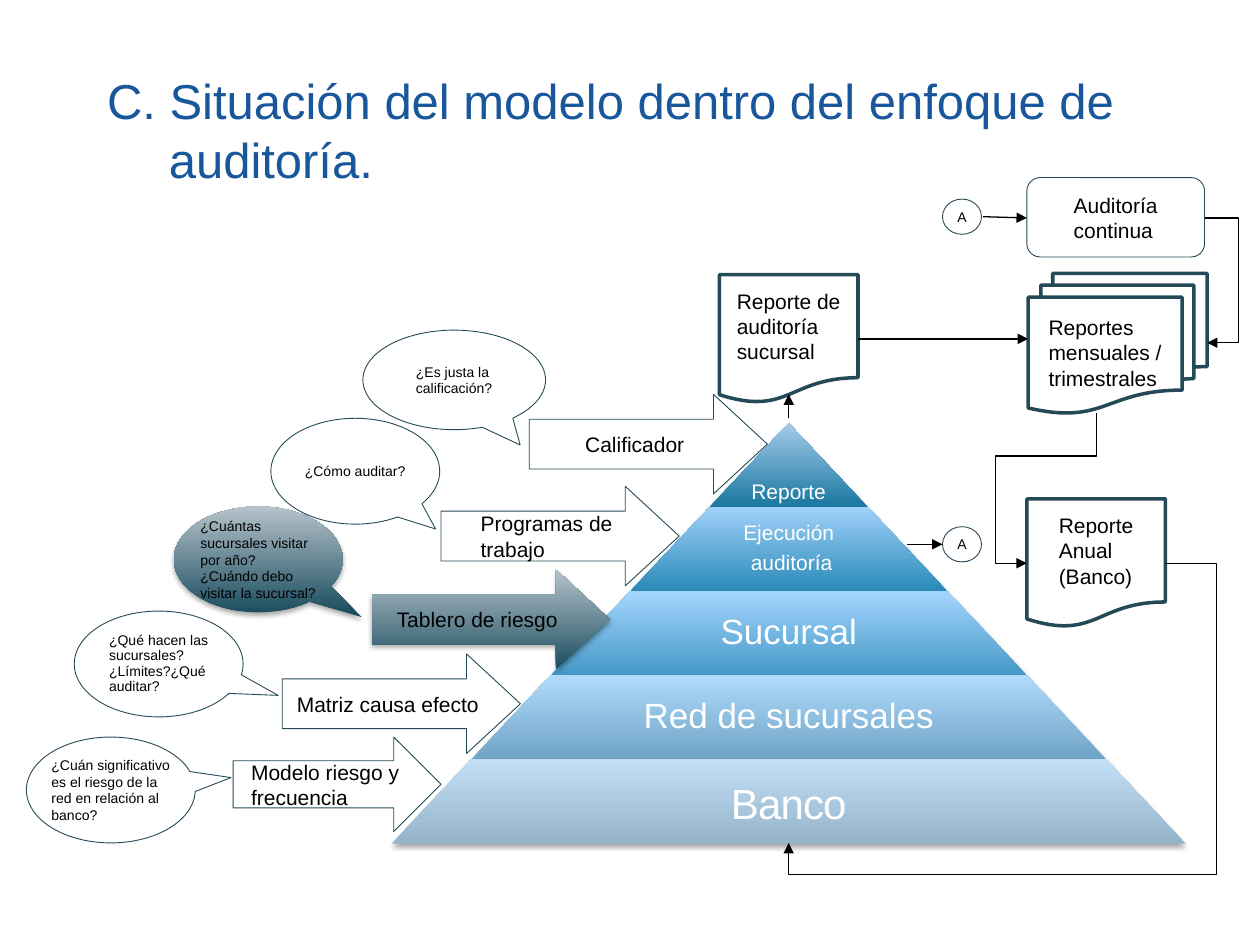
from lxml import etree
from pptx import Presentation
from pptx import util as u
from pptx.dml.color import RGBColor
from pptx.enum import shapes, text
from pptx.oxml import ns

SHAPE = shapes.MSO_SHAPE
ANCHOR = text.MSO_ANCHOR
STEEL = ("1C4E60", "B6C3CB")


def rgb(value):
    """Turn a hex string into a colour."""
    return RGBColor.from_string(value)


def child(parent, tag, **attributes):
    """Append an XML element with the given attributes."""
    node = etree.SubElement(parent, ns.qn(tag))
    for name, value in attributes.items():
        node.set(name, str(value))
    return node


class Diagram:
    """Hold the style and the current slide."""
    font = "Arial"
    ink, outline, title_colour = "000000", "244A58", "18579B"

    def __init__(self, deck):
        """Start a title-only slide."""
        self.page = deck.slides.add_slide(deck.slide_layouts[5])

    def label(self, frame, lines, size, colour, insets, anchor=ANCHOR.MIDDLE):
        """Fill a text frame with paragraphs and return them."""
        frame.word_wrap = True
        frame.auto_size = text.MSO_AUTO_SIZE.NONE
        frame.vertical_anchor = anchor
        frame.margin_left, frame.margin_top, frame.margin_right, frame.margin_bottom = map(u.Inches, insets)
        frame.text = "\n".join(lines)
        for para in frame.paragraphs:
            para.alignment = text.PP_ALIGN.LEFT
            para.font.name, para.font.size = self.font, u.Pt(size)
            para.font.color.rgb = rgb(colour)
        return frame.paragraphs

    def title(self, words, box):
        """Place the title with a hanging indent."""
        holder = self.page.shapes.title
        holder.left, holder.top, holder.width, holder.height = map(u.Inches, box)
        para = self.label(holder.text_frame, [words], 28, self.title_colour, (0.1, 0.05, 0.1, 0.05))[0]
        props = para._p.get_or_add_pPr()
        props.set("marL", str(u.Inches(0.49)))
        props.set("indent", str(u.Inches(-0.49)))

    def gradient(self, shape, colours):
        """Give a shape an upward gradient and a soft shadow."""
        shape.fill.gradient()
        shape.fill.gradient_angle = 90
        for stop, colour in zip(shape.fill.gradient_stops, colours):
            stop.color.rgb = rgb(colour)
        shape.line.fill.background()
        shape.shadow.inherit = False
        effects = shape._element.spPr.find(ns.qn("a:effectLst"))
        shadow = child(effects, "a:outerShdw", blurRad=u.Pt(3.1), dist=u.Pt(1.8),
                       dir=5400000, rotWithShape=0)
        child(child(shadow, "a:srgbClr", val="000000"), "a:alpha", val=35000)

    def shape(self, kind, box, lines, size=12, insets=(0.1, 0.05, 0.1, 0.05),
              adjust=(), fill=None, weight=0.5, colours=None, spacing=None):
        """Add a labelled shape, outlined or shaded."""
        shape = self.page.shapes.add_shape(kind, *map(u.Inches, box))
        for index, value in enumerate(adjust):
            shape.adjustments[index] = value
        if colours:
            self.gradient(shape, colours)
        else:
            if fill:
                shape.fill.solid()
                shape.fill.fore_color.rgb = rgb(fill)
            else:
                shape.fill.background()
            shape.line.color.rgb = rgb(self.outline)
            shape.line.width = u.Pt(weight)
            shape.shadow.inherit = False
        for para in self.label(shape.text_frame, lines, size, self.ink, insets):
            para.line_spacing = spacing
        shape.text_frame._txBody.bodyPr.set("anchorCtr", "1")

    def arrow(self, box, label, adjust=(0.5, 0.541), **style):
        """Add a block arrow."""
        self.shape(SHAPE.RIGHT_ARROW, box, [label], adjust=adjust, **style)

    def callout(self, box, lines, tip, **style):
        """Add a speech bubble pointing at its tip."""
        self.shape(SHAPE.OVAL_CALLOUT, box, lines, 8, (0, 0.05, 0, 0.05), tip, **style)

    def document(self, kind, box, label):
        """Add a document symbol."""
        self.shape(kind, box, [label], fill="FFFFFF", weight=2)

    def reference(self, left, top):
        """Add a circled A."""
        self.shape(SHAPE.FLOWCHART_CONNECTOR, (left, top, 0.31, 0.28), ["A"], 8, (0, 0.05, 0, 0.05))

    def pyramid(self, middle, top, step, height, levels):
        """Stack trapezoids from the apex down, each with its label."""
        group = self.page.shapes.add_group_shape()
        for row, (lines, size, colours, pad, anchor, share) in enumerate(levels):
            width, y = step * (row + 1), top + height * row
            band = group.shapes.add_shape(
                SHAPE.TRAPEZOID, *map(u.Inches, (middle - width / 2, y, width, height)))
            band.adjustments[0] = step / 2 / height
            self.gradient(band, colours)
            box = group.shapes.add_textbox(
                *map(u.Inches, (middle - width * share / 2, y, width * share, height)))
            insets = (0.03, pad, 0.03, 0.03)
            for para in self.label(box.text_frame, lines, size, "FFFFFF", insets, anchor):
                para.alignment = text.PP_ALIGN.CENTER
                para.line_spacing = 0.9
                para.space_after = u.Pt(0.35 * size)
                if size == 24:
                    para.runs[0]._r.get_or_add_rPr().set("spc", "-50")

    def connector(self, start, end, preset="line", adjust=(), turn=0):
        """Add a straight or bent line with an arrowhead at its end."""
        line = self.page.shapes.add_connector(
            shapes.MSO_CONNECTOR.STRAIGHT, *map(u.Inches, start + end))
        line.line.color.rgb = rgb(self.ink)
        line.line.width = u.Pt(0.75)
        props = line._element.spPr
        child(props.find(ns.qn("a:ln")), "a:tailEnd", type="triangle")
        child(props, "a:effectLst")
        if turn:
            props.find(ns.qn("a:xfrm")).set("rot", str(turn * 60000))
        geometry = props.find(ns.qn("a:prstGeom"))
        geometry.set("prst", preset)
        guides = geometry.find(ns.qn("a:avLst"))
        for index, value in enumerate(adjust, 1):
            child(guides, "a:gd", name=f"adj{index}", fmla=f"val {round(value * 100000)}")


def main():
    """Build the audit approach slide."""
    deck = Presentation()
    deck.slide_width, deck.slide_height = u.Inches(10), u.Inches(7.5)
    page = Diagram(deck)
    page.title("C. Situación del modelo dentro del enfoque de auditoría.", (0.75, 0.67, 8.5, 0.72))

    page.pyramid(6.26, 3.36, 1.26, 0.667, [
        (["Reporte"], 12, ("1877A0", "A5CBEA"), 0.02, ANCHOR.BOTTOM, 1),
        (["Ejecución", " auditoría"], 12, ("2989B8", "9FD1F9"), 0.02, ANCHOR.MIDDLE, 0.65),
        (["Sucursal"], 20, ("4598C6", "A3D6FF"), 0.03, ANCHOR.MIDDLE, 0.65),
        (["Red de sucursales"], 20, ("6FA4C5", "AFDAFC"), 0.03, ANCHOR.MIDDLE, 0.65),
        (["Banco"], 24, ("95B3C9", "C2DFF6"), 0.1, ANCHOR.MIDDLE, 0.65),
    ])

    page.arrow((1.85, 5.85, 1.65, 0.75), "Modelo riesgo y frecuencia", (0.5, 0.5))
    page.arrow((2.95, 4.52, 1.89, 0.79), "Tablero de riesgo", colours=STEEL)
    page.arrow((3.5, 3.86, 1.89, 0.79), "Programas de trabajo")
    page.arrow((2.24, 5.19, 1.89, 0.79), "Matriz causa efecto")
    page.callout((0.21, 5.85, 1.34, 0.84),
                 ["¿Cuán significativo es el riesgo de la red en relación al banco?"], (0.712, -0.117))
    page.callout((0.59, 4.85, 1.34, 0.84),
                 ["¿Qué hacen las sucursales?", "¿Límites?¿Qué auditar?"], (0.707, 0.297), spacing=0.9)
    page.callout((1.38, 4.02, 1.34, 0.84),
                 ["¿Cuántas sucursales visitar por año?", "¿Cuándo debo visitar la sucursal?"],
                 (0.614, 0.546), colours=STEEL)
    page.callout((2.15, 3.32, 1.34, 0.84), ["¿Cómo auditar?"], (0.476, 0.546))
    page.arrow((4.2, 3.13, 1.89, 0.79), "Calificador")
    page.callout((2.88, 2.62, 1.45, 0.79), ["¿Es justa la calificación?"], (0.361, 0.654))

    page.document(SHAPE.FLOWCHART_DOCUMENT, (5.71, 2.18, 1.1, 1.02), "Reporte de auditoría sucursal")
    page.document(SHAPE.FLOWCHART_MULTIDOCUMENT, (8.16, 2.17, 1.42, 1.11),
                  "Reportes mensuales / trimestrales")
    page.document(SHAPE.FLOWCHART_DOCUMENT, (8.15, 3.96, 1.1, 1.02), "Reporte Anual (Banco)")
    page.shape(SHAPE.ROUNDED_RECTANGLE, (8.15, 1.41, 1.41, 0.63), ["Auditoría continua"])
    page.reference(7.48, 4.18)
    page.reference(7.48, 1.58)

    page.connector((9.25, 4.47), (6.26, 6.69), "bentConnector4", (-0.136, 1.112))
    page.connector((9.56, 1.73), (9.58, 2.72), "bentConnector3", (13.5,))
    page.connector((7.83, 3.6), (9.02, 4.15), "bentConnector4", (0.285, 1.454), 90)
    for start, end in [((6.81, 2.69), (8.16, 2.69)), ((7.2, 4.32), (7.48, 4.32)),
                       ((7.8, 1.72), (8.15, 1.73)), ((6.26, 3.32), (6.26, 3.13))]:
        page.connector(start, end)
    deck.save("out.pptx")


if __name__ == "__main__":
    main()
